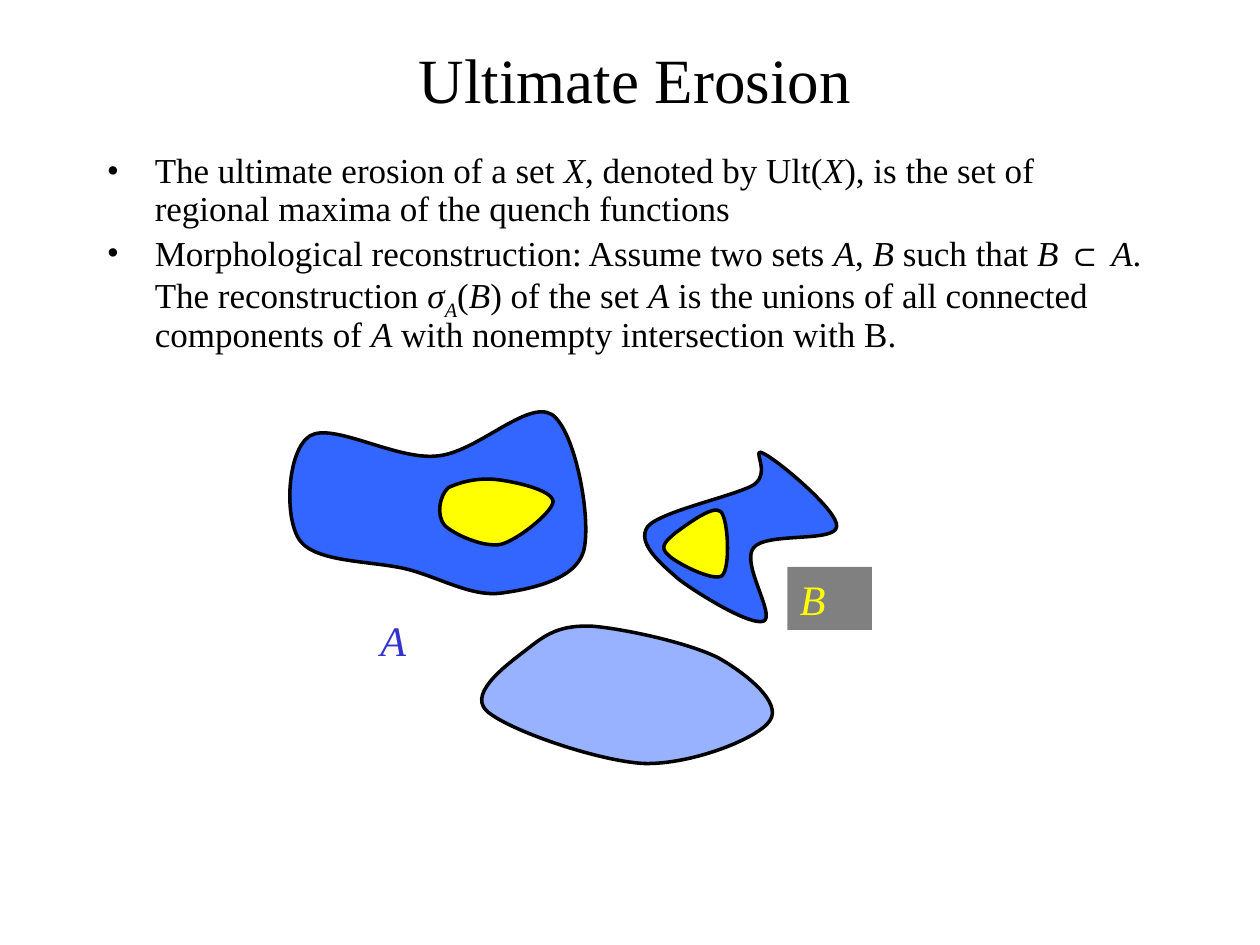
from lxml.etree import SubElement
from pptx import Presentation
from pptx.dml.color import RGBColor
from pptx.enum.shapes import MSO_SHAPE
from pptx.enum.text import MSO_ANCHOR, MSO_AUTO_SIZE, PP_ALIGN
from pptx.oxml.ns import qn
from pptx.util import Inches, Pt

CELL = Inches(10) // 1000
FONT = "Times New Roman"
BLACK, BLUE, YELLOW, GREY, INDIGO = "000000", "3366FF", "FFFF00", "808080", "3333CC"

BULLETS = [
    "The ultimate erosion of a set *X*, denoted by Ult(*X*), is the set of "
    "regional maxima of the quench functions",
    "Morphological reconstruction: Assume two sets *A*, *B* such that *B *⊂ *A*. "
    "The reconstruction *σ**_A*(*B*) of the set *A* is the unions of all connected "
    "components of *A* with nonempty intersection with B.",
]

LEFT_SET = [
    (124, 152), (97, 145), (51, 147), (38, 129), (25, 111), (28, 57), (46, 46),
    (64, 35), (114, 65), (146, 62), (178, 60), (218, 17), (238, 29),
    (257, 42), (270, 114), (263, 138), (256, 161), (219, 168), (196, 171),
    (173, 173), (150, 159), (124, 152),
]
RIGHT_SET = [
    (398, 85), (382, 94), (324, 106), (314, 118), (305, 131), (324, 147), (339, 160),
    (355, 172), (396, 197), (406, 193), (416, 189), (388, 147), (398, 135),
    (407, 122), (463, 131), (464, 118), (466, 106), (417, 65), (406, 60),
    (395, 54), (413, 75), (398, 85),
]
LOWER_SET = [
    (220, 214), (206, 225), (171, 249), (186, 264), (202, 279), (274, 304), (311, 306),
    (349, 307), (402, 286), (411, 272), (421, 258), (393, 235), (370, 222),
    (346, 210), (295, 199), (270, 197), (245, 196), (234, 203), (220, 214),
]
LEFT_MARKER = [
    (156, 87), (149, 93), (146, 109), (153, 117), (160, 124), (184, 135), (198, 132),
    (212, 128), (239, 106), (239, 98), (238, 89), (211, 83), (197, 81),
    (183, 79), (169, 81), (156, 87),
]
RIGHT_MARKER = [
    (336, 123), (329, 129), (323, 134), (330, 140), (335, 146), (366, 162), (373, 157),
    (380, 151), (378, 111), (372, 106), (366, 100), (343, 118), (336, 123),
]


def color(value):
    """Return the colour of a hex string."""
    return RGBColor.from_string(value)


def cells(box):
    """Convert grid cells to slide lengths."""
    return [value * CELL for value in box]


def style_span(span, size, ink=BLACK, italic=False):
    """Set the font of one run."""
    span.font.name = FONT
    span.font.size = Pt(size)
    span.font.color.rgb = color(ink)
    span.font.italic = italic


def space_before(para, percent):
    """Set the space above a paragraph as a share of its line."""
    spacing = SubElement(para._p.get_or_add_pPr(), qn("a:spcBef"))
    SubElement(spacing, qn("a:spcPct"), val=str(percent * 1000))


def add_title(page, box, text):
    """Place the centred slide title."""
    frame = page.shapes.add_textbox(*cells(box)).text_frame
    frame.word_wrap = True
    frame.vertical_anchor = MSO_ANCHOR.MIDDLE
    frame.text = text
    para = frame.paragraphs[0]
    para.alignment = PP_ALIGN.CENTER
    style_span(para.runs[0], 36)


def add_marked_text(para, text, size):
    """Write text whose starred parts are italic and underscored parts subscript."""
    for index, part in enumerate(text.split("*")):
        if part:
            span = para.add_run()
            span.text = part.lstrip("_")
            style_span(span, size, italic=index % 2 == 1)
            if part.startswith("_"):
                span.font._element.set("baseline", "-25000")


def add_bullets(page, box, items):
    """Place the bulleted definitions."""
    frame = page.shapes.add_textbox(*cells(box)).text_frame
    frame.word_wrap = True
    for index, item in enumerate(items):
        para = frame.add_paragraph() if index else frame.paragraphs[0]
        add_marked_text(para, item, 20)
        space_before(para, 20)
        para.line_spacing = 0.9
        properties = para._p.get_or_add_pPr()
        properties.set("marL", str(38 * CELL))
        properties.set("indent", str(-38 * CELL))
        SubElement(properties, qn("a:buFont"), typeface=FONT)
        SubElement(properties, qn("a:buChar"), char="•")


def add_blob(page, box, points, fill, alpha=None):
    """Draw a closed outline of cubic curves from anchor and control points."""
    placed = [(box[0] + x, box[1] + y) for x, y in points]
    builder = page.shapes.build_freeform(*placed[0], scale=CELL)
    builder.add_line_segments(placed[1:], close=True)
    blob = builder.convert_to_shape()
    lines = list(blob._element.iter(qn("a:lnTo")))
    for first, second, third in zip(*[iter(lines)] * 3):
        first.tag = qn("a:cubicBezTo")
        for line in (second, third):
            first.append(line[0])
            line.getparent().remove(line)
    blob.shadow.inherit = False
    blob.fill.solid()
    blob.fill.fore_color.rgb = color(fill)
    blob.line.color.rgb = color(BLACK)
    blob.line.width = Pt(2)
    if alpha:
        tint = blob._element.spPr.find(qn("a:solidFill"))[0]
        SubElement(tint, qn("a:alpha"), val=str(alpha * 1000))


def add_label(page, box, text, ink, fill=None):
    """Place a set name, on a filled plate if a fill is given."""
    if fill:
        label = page.shapes.add_shape(MSO_SHAPE.RECTANGLE, *cells(box))
        label.shadow.inherit = False
        label.fill.solid()
        label.fill.fore_color.rgb = color(fill)
        label.line.fill.background()
    else:
        label = page.shapes.add_textbox(*cells(box))
    frame = label.text_frame
    frame.word_wrap = True
    frame.auto_size = MSO_AUTO_SIZE.SHAPE_TO_FIT_TEXT
    frame.vertical_anchor = MSO_ANCHOR.TOP
    frame.text = text
    para = frame.paragraphs[0]
    space_before(para, 50)
    para.alignment = PP_ALIGN.LEFT
    style_span(para.runs[0], 24, ink, italic=True)


def add_figure(page, box):
    """Draw the sets of A, the markers of B and their names."""
    left, top = box[:2]
    add_blob(page, box, LEFT_SET, BLUE)
    add_blob(page, box, RIGHT_SET, BLUE)
    add_blob(page, box, LOWER_SET, BLUE, alpha=50)
    for marker in (LEFT_MARKER, RIGHT_MARKER):
        add_blob(page, box, marker, YELLOW)
    add_label(page, (left + 425, top + 150, 67, 50), "B", YELLOW, GREY)
    add_label(page, (left + 92, top + 183, 67, 50), "A", INDIGO)


def main():
    """Build and save the slide."""
    deck = Presentation()
    deck.slide_width, deck.slide_height = cells((1000, 750))
    page = deck.slides.add_slide(deck.slide_layouts[6])
    add_title(page, (64, 19, 880, 86), "Ultimate Erosion")
    add_bullets(page, (75, 117, 842, 576), BULLETS)
    add_figure(page, (200, 300, 500, 320))
    deck.save("out.pptx")


if __name__ == "__main__":
    main()
